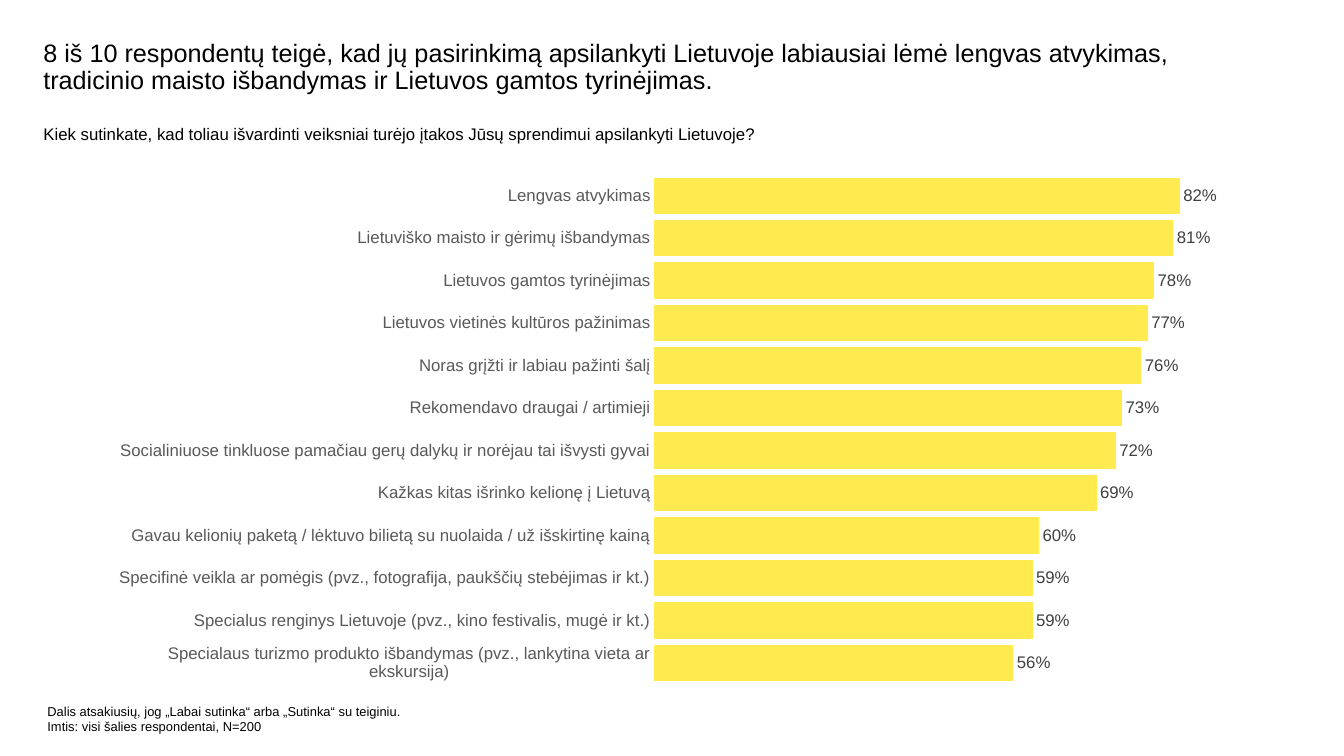
from pptx import Presentation
from pptx import util as u
from pptx.chart.data import CategoryChartData
from pptx.dml.color import RGBColor
from pptx.enum import chart as charts
from pptx.enum import text
from lxml import etree

COLORS = {
    "background": "FFFFFF",
    "text": "000000",
    "category": "595959",
    "value": "404040",
    "bar": "FFEB50",
}
FONT = "Arial"

FACTORS = [
    ("Lengvas atvykimas", 0.82),
    ("Lietuviško maisto ir gėrimų išbandymas", 0.81),
    ("Lietuvos gamtos tyrinėjimas", 0.78),
    ("Lietuvos vietinės kultūros pažinimas", 0.77),
    ("Noras grįžti ir labiau pažinti šalį", 0.76),
    ("Rekomendavo draugai / artimieji", 0.73),
    ("Socialiniuose tinkluose pamačiau gerų dalykų ir norėjau tai išvysti gyvai", 0.72),
    ("Kažkas kitas išrinko kelionę į Lietuvą", 0.69),
    ("Gavau kelionių paketą / lėktuvo bilietą su nuolaida / už išskirtinę kainą", 0.60),
    ("Specifinė veikla ar pomėgis (pvz., fotografija, paukščių stebėjimas ir kt.)", 0.59),
    ("Specialus renginys Lietuvoje (pvz., kino festivalis, mugė ir kt.)", 0.59),
    ("Specialaus turizmo produkto išbandymas (pvz., lankytina vieta ar ekskursija)", 0.56),
]


def color(name):
    return RGBColor.from_string(COLORS[name])


class SurveySlide:
    def __init__(self, presentation):
        self.slide = presentation.slides.add_slide(presentation.slide_layouts[6])
        fill = self.slide.background.fill
        fill.solid()
        fill.fore_color.rgb = color("background")

    def style_font(self, font, size, color_name):
        font.name = FONT
        font.size = u.Pt(size)
        font.bold = False
        font.color.rgb = color(color_name)

    def add_text(self, box, lines, size, line_spacing=1.0):
        shape = self.slide.shapes.add_textbox(*map(u.Inches, box))
        frame = shape.text_frame
        frame.word_wrap = True
        frame.vertical_anchor = text.MSO_ANCHOR.TOP
        frame.margin_left = frame.margin_right = 0
        frame.margin_top = frame.margin_bottom = 0
        for index, line in enumerate(lines):
            paragraph = frame.add_paragraph() if index else frame.paragraphs[0]
            paragraph.line_spacing = line_spacing
            run = paragraph.add_run()
            run.text = line
            self.style_font(run.font, size, "text")

    def add_bar_chart(self, box, factors, plot_area):
        """Draw horizontal bars with the first factor at the top."""
        data = CategoryChartData(number_format="0%")
        rows = factors[::-1]
        data.categories = [label for label, _ in rows]
        data.add_series("Series 1", [share for _, share in rows])
        chart = self.slide.shapes.add_chart(
            charts.XL_CHART_TYPE.BAR_CLUSTERED, *map(u.Inches, box), data
        ).chart
        chart.has_legend = False
        chart.has_title = False
        self.style_font(chart.font, 10, "text")

        categories = chart.category_axis
        categories.major_tick_mark = charts.XL_TICK_MARK.NONE
        categories.format.line.color.rgb = color("background")
        categories.format.line.width = u.Pt(0.75)
        self.style_font(categories.tick_labels.font, 12, "category")

        values = chart.value_axis
        values.minimum_scale = 0
        values.maximum_scale = 0.9
        values.has_major_gridlines = False
        values.visible = False

        plot = chart.plots[0]
        plot.gap_width = 20
        plot.vary_by_categories = False
        bars = plot.series[0]
        bars.format.fill.solid()
        bars.format.fill.fore_color.rgb = color("bar")
        bars.format.line.color.rgb = color("bar")
        bars.format.line.width = u.Pt(0.75)

        labels = bars.data_labels
        labels.show_value = True
        labels.number_format = "0%"
        labels.number_format_is_linked = False
        labels.position = charts.XL_LABEL_POSITION.OUTSIDE_END
        self.style_font(labels.font, 12, "value")
        self.place_plot(chart, plot_area)

    def place_plot(self, chart, plot_area):
        """Fix the inner plot area as fractions of the chart."""
        area = chart.element.find(".//{*}plotArea")
        namespace = "{%s}" % etree.QName(area).namespace
        for old_layout in area.findall(namespace + "layout"):
            area.remove(old_layout)
        layout = etree.Element(namespace + "layout")
        manual = etree.SubElement(layout, namespace + "manualLayout")
        settings = [("layoutTarget", "inner"), ("xMode", "edge"), ("yMode", "edge")]
        settings += zip("xywh", plot_area)
        for name, value in settings:
            etree.SubElement(manual, namespace + name, val=str(value))
        area.insert(0, layout)


def main():
    presentation = Presentation()
    presentation.slide_width = u.Inches(13.33)
    presentation.slide_height = u.Inches(7.5)
    survey = SurveySlide(presentation)
    survey.add_text(
        (0.43, 0.4, 11.25, 0.6),
        ["8 iš 10 respondentų teigė, kad jų pasirinkimą apsilankyti Lietuvoje labiausiai "
         "lėmė lengvas atvykimas, tradicinio maisto išbandymas ir Lietuvos gamtos tyrinėjimas."],
        18, line_spacing=0.9,
    )
    survey.add_text(
        (0.43, 1.23, 11.89, 0.61),
        ["Kiek sutinkate, kad toliau išvardinti veiksniai turėjo įtakos Jūsų sprendimui "
         "apsilankyti Lietuvoje?"],
        12,
    )
    survey.add_text(
        (0.47, 6.98, 3.52, 0.4),
        ["Dalis atsakiusių, jog „Labai sutinka“ arba „Sutinka“ su teiginiu.",
         "Imtis: visi šalies respondentai, N=200"],
        9.2,
    )
    survey.add_bar_chart((0.93, 1.57, 11.47, 5.38), FACTORS, (0.485, 0.03, 0.498, 0.94))
    presentation.save("out.pptx")


if __name__ == "__main__":
    main()
